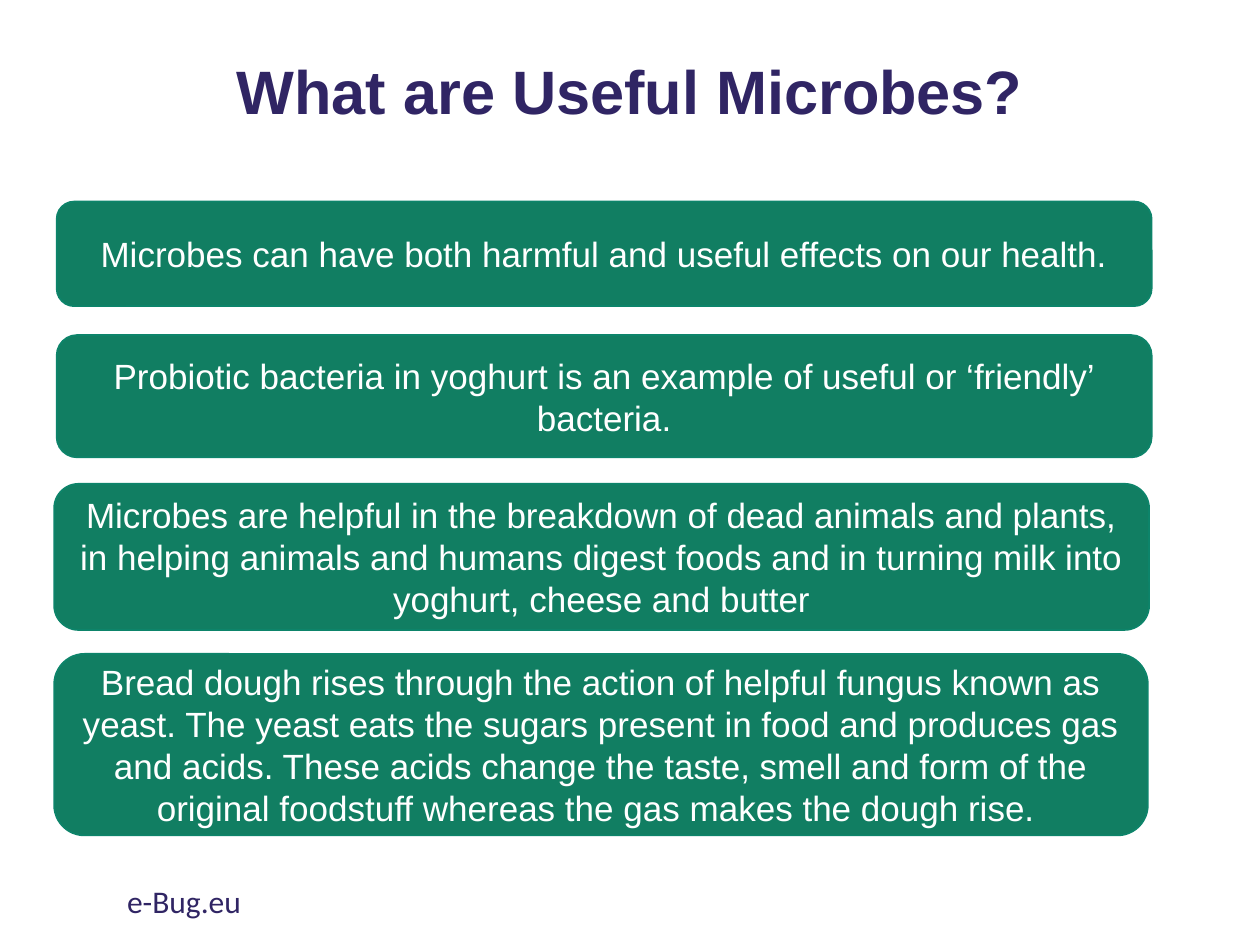
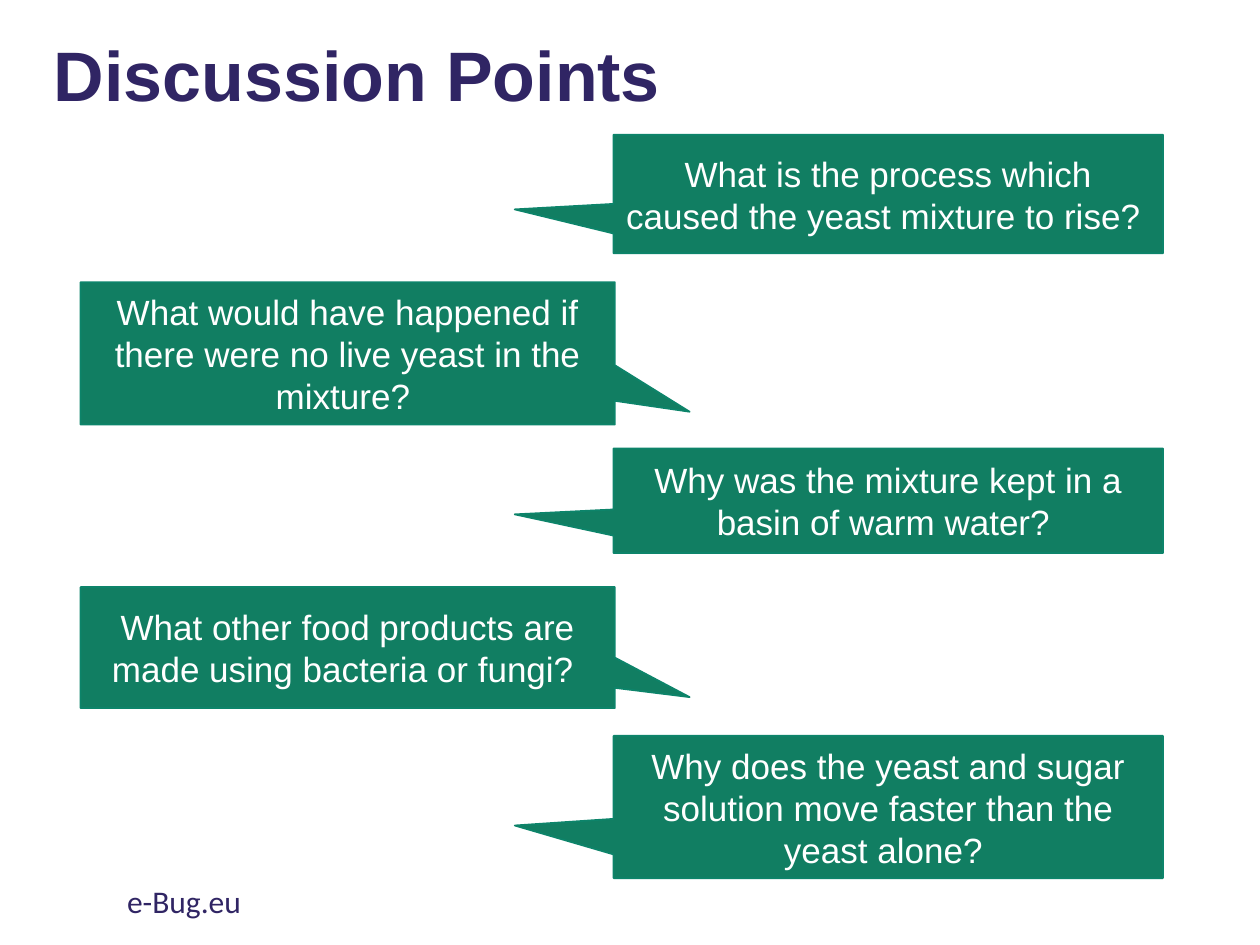
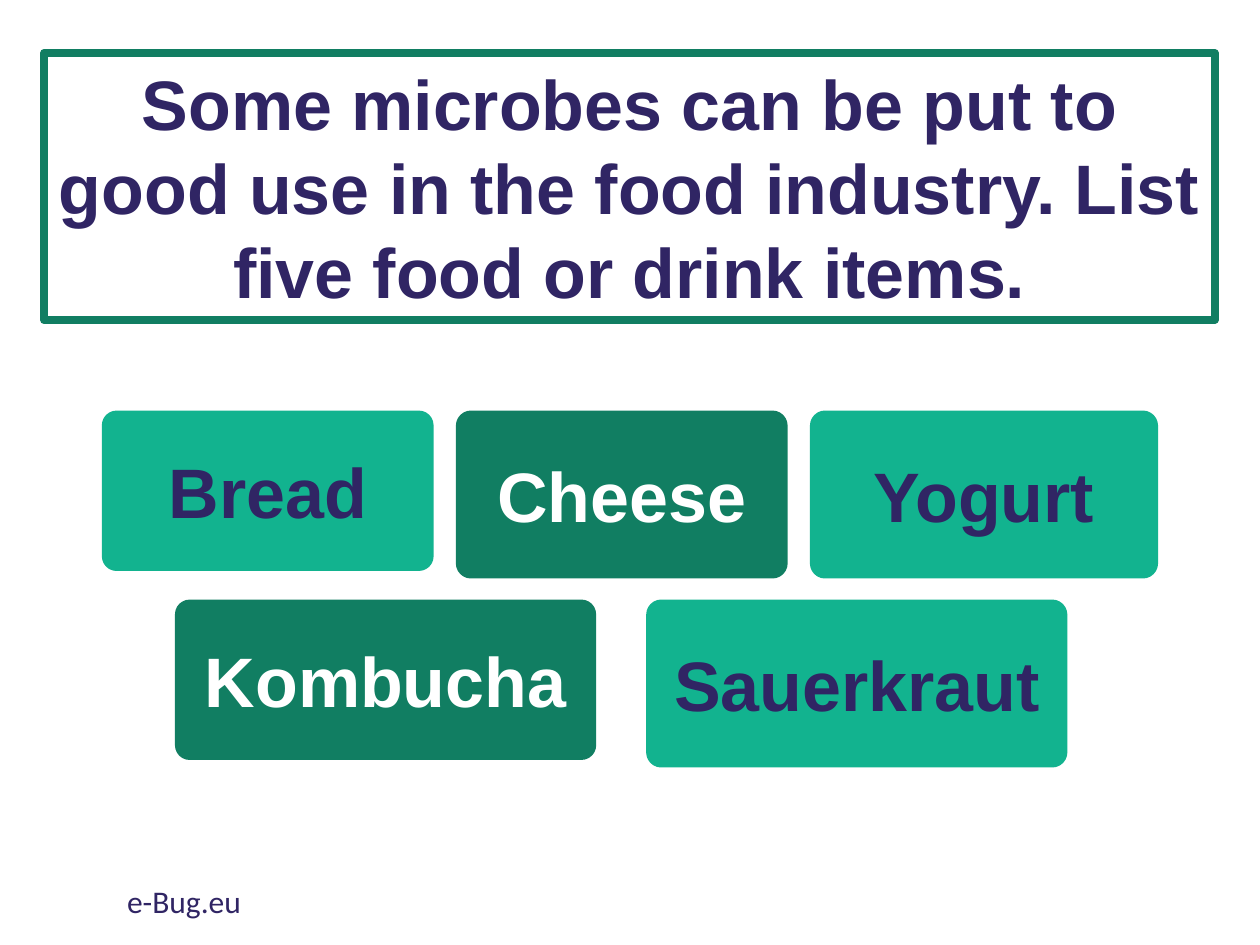
from dataclasses import dataclass

import pptx
import pptx.dml.color
import pptx.enum.shapes
import pptx.enum.text
import pptx.util

SHAPES = pptx.enum.shapes.MSO_SHAPE
ANCHOR = pptx.enum.text.MSO_ANCHOR
ALIGN = pptx.enum.text.PP_ALIGN

SLIDE_WIDTH = pptx.util.Inches(10)
SLIDE_HEIGHT = pptx.util.Inches(7.5)
COLUMN = SLIDE_WIDTH / 100
ROW = SLIDE_HEIGHT / 75


@dataclass(frozen=True)
class Theme:
    indigo: str = "302564"
    green: str = "117E62"
    edge_green: str = "0D846A"
    mint: str = "12B38F"
    white: str = "FFFFFF"
    heading_font: str = "Arial"
    footer_font: str = "Calibri"
    title_size: int = 35
    large_size: int = 40
    body_size: int = 20
    footer_size: int = 18
    thin_line: float = 1
    thick_line: float = 4.5


THEME = Theme()


@dataclass(frozen=True)
class Area:
    """A place on the slide, in grid columns and rows."""
    left: float
    top: float
    width: float
    height: float

    def lengths(self) -> tuple[int, int, int, int]:
        return (round(self.left * COLUMN), round(self.top * ROW),
                round(self.width * COLUMN), round(self.height * ROW))


@dataclass(frozen=True)
class Side:
    """Where a column of speech callouts stands and where its tails point."""
    left: float
    width: float
    tail: tuple[float, float]


@dataclass(frozen=True)
class Question:
    side: Side
    top: float
    height: float
    text: str


@dataclass(frozen=True)
class Food:
    name: str
    width: float
    height: float
    dark: bool


@dataclass(frozen=True)
class FoodRow:
    left: float
    gap: float
    foods: tuple[Food, ...]


FOOTER_AREA = Area(9.1, 69.5, 33.8, 4)

FACTS = (
    (Area(4.5, 16, 86.9, 8.3),
     "Microbes can have both harmful and useful effects on our health."),
    (Area(4.5, 26.6, 86.9, 9.7),
     "Probiotic bacteria in yoghurt is an example of useful or ‘friendly’ bacteria."),
    (Area(4.3, 38.4, 86.9, 11.6),
     "Microbes are helpful in the breakdown of dead animals and plants, in helping "
     "animals and humans digest foods and in turning milk into yoghurt, cheese and butter"),
    (Area(4.3, 51.9, 86.8, 14.4),
     "Bread dough rises through the action of helpful fungus known as yeast. The yeast "
     "eats the sugars present in food and produces gas and acids. These acids change the "
     "taste, smell and form of the original foodstuff whereas the gas makes the dough rise. "),
)

LEFT_SIDE = Side(6.4, 42.4, (0.64, 0.41))
RIGHT_SIDE = Side(48.7, 43.6, (-0.68, 0.13))
QUESTIONS = (
    Question(RIGHT_SIDE, 10.7, 9.4,
             "What is the process which caused the yeast mixture to rise? "),
    Question(LEFT_SIDE, 22.4, 11.3,
             "What would have happened if there were no live yeast in the mixture? "),
    Question(RIGHT_SIDE, 35.6, 8.3,
             "Why was the mixture kept in a basin of warm water? "),
    Question(LEFT_SIDE, 46.6, 9.6,
             "What other food products are made using bacteria or fungi? "),
    Question(RIGHT_SIDE, 58.4, 11.3,
             "Why does the yeast and sugar solution move faster than the yeast alone? "),
)

FOOD_TOP = 32.9
FOOD_PITCH = 15
FOOD_CORNER = 0.07
FOOD_ROWS = (
    FoodRow(8.4, 2.4, (Food("Bread", 25.7, 12.1, False),
                       Food("Cheese", 25.7, 12.7, True),
                       Food("Yogurt", 27, 12.7, False))),
    FoodRow(14.2, 4.6, (Food("Kombucha", 32.8, 12.1, True),
                        Food("Sauerkraut", 32.8, 12.7, False))),
)


def rgb(colour: str):
    return pptx.dml.color.RGBColor.from_string(colour)


def write(holder, text: str, *, size: float, colour: str,
          font: str = THEME.heading_font, bold: bool = False,
          align=ALIGN.CENTER, anchor=ANCHOR.MIDDLE,
          spacing: float | None = None, after: float | None = None) -> None:
    frame = holder.text_frame
    frame.word_wrap = True
    frame.vertical_anchor = anchor
    paragraph = frame.paragraphs[0]
    paragraph.alignment = align
    if spacing is not None:
        paragraph.line_spacing = spacing
    if after is not None:
        paragraph.space_after = pptx.util.Pt(after)
    run = paragraph.add_run()
    run.text = text
    run.font.name = font
    run.font.size = pptx.util.Pt(size)
    run.font.bold = bold
    run.font.color.rgb = rgb(colour)


def add_panel(slide, kind, area: Area, *, fill: str | None = THEME.green,
              line: str = THEME.edge_green, line_width: float = THEME.thin_line,
              adjustments: tuple[float, ...] = ()):
    panel = slide.shapes.add_shape(kind, *area.lengths())
    panel.shadow.inherit = False
    if fill is None:
        panel.fill.background()
    else:
        panel.fill.solid()
        panel.fill.fore_color.rgb = rgb(fill)
    panel.line.color.rgb = rgb(line)
    panel.line.width = pptx.util.Pt(line_width)
    for index, value in enumerate(adjustments):
        panel.adjustments[index] = value
    return panel


def add_title(slide, text: str, area: Area, size: float, align) -> None:
    title = slide.shapes.add_textbox(*area.lengths())
    write(title, text, size=size, colour=THEME.indigo, bold=True,
          align=align, spacing=0.9)


def add_footed_slide(deck):
    slide = deck.slides.add_slide(deck.slide_layouts[6])
    footer = slide.shapes.add_textbox(*FOOTER_AREA.lengths())
    write(footer, "e-Bug.eu", size=THEME.footer_size, colour=THEME.indigo,
          font=THEME.footer_font, align=ALIGN.LEFT, anchor=ANCHOR.TOP)
    return slide


def build_useful_microbes(deck) -> None:
    slide = add_footed_slide(deck)
    add_title(slide, "What are Useful Microbes?", Area(6.9, 0.3, 86.2, 14.5),
              THEME.title_size, ALIGN.CENTER)
    for area, fact in FACTS:
        bar = add_panel(slide, SHAPES.ROUNDED_RECTANGLE, area)
        write(bar, fact, size=THEME.body_size, colour=THEME.white)


def build_discussion(deck) -> None:
    slide = add_footed_slide(deck)
    add_title(slide, "Discussion Points", Area(3.3, -1, 86.2, 14.5),
              THEME.large_size, ALIGN.LEFT)
    for question in QUESTIONS:
        side = question.side
        area = Area(side.left, question.top, side.width, question.height)
        callout = add_panel(slide, SHAPES.RECTANGULAR_CALLOUT, area,
                            adjustments=side.tail)
        write(callout, question.text, size=THEME.body_size, colour=THEME.white)


def build_food_list(deck) -> None:
    slide = add_footed_slide(deck)
    task = add_panel(slide, SHAPES.RECTANGLE, Area(3.5, 4.2, 92.9, 21.2), fill=None,
                     line=THEME.green, line_width=THEME.thick_line)
    write(task, "Some microbes can be put to good use in the food industry. "
          "List five food or drink items.",
          size=THEME.large_size, colour=THEME.indigo, bold=True, after=6)
    for index, row in enumerate(FOOD_ROWS):
        left = row.left
        for food in row.foods:
            area = Area(left, FOOD_TOP + index * FOOD_PITCH, food.width, food.height)
            fill = THEME.green if food.dark else THEME.mint
            tile = add_panel(slide, SHAPES.ROUNDED_RECTANGLE, area, fill=fill, line=fill,
                             line_width=THEME.thick_line, adjustments=(FOOD_CORNER,))
            write(tile, food.name, size=THEME.large_size, bold=True,
                  colour=THEME.white if food.dark else THEME.indigo)
            left += food.width + row.gap


def main() -> None:
    deck = pptx.Presentation()
    deck.slide_width = SLIDE_WIDTH
    deck.slide_height = SLIDE_HEIGHT
    build_useful_microbes(deck)
    build_discussion(deck)
    build_food_list(deck)
    deck.save("out.pptx")


if __name__ == "__main__":
    main()
